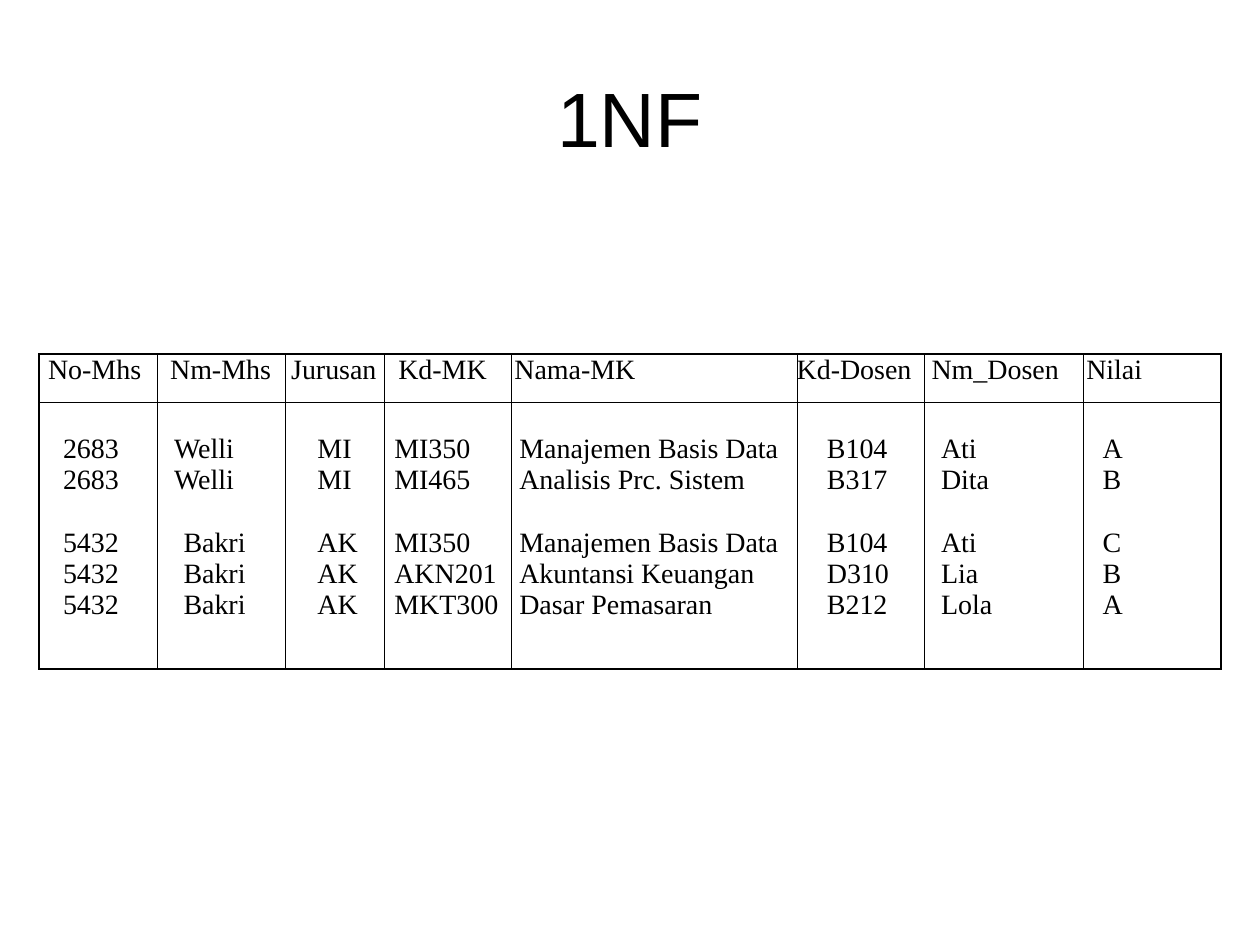
from dataclasses import dataclass

from lxml.etree import SubElement
from pptx import Presentation
from pptx.dml.color import RGBColor
from pptx.enum.shapes import MSO_CONNECTOR
from pptx.enum.text import MSO_ANCHOR, PP_ALIGN
from pptx.oxml.ns import qn
from pptx.util import Cm, Pt

BLACK = "000000"
TITLE_FONT = {"name": "Arial", "size": Pt(44)}
TABLE_FONT = {"name": "Times New Roman", "size": Pt(16)}

# Table measures in centimetres; tab stops count from the cell's text edge
LEFT, TOP, WIDTH = 0.79, 7.14, 23.82
ROW_HEIGHTS = [0.97, 5.38]
DIVIDERS = [3.18, 5.76, 7.75, 10.31, 16.08, 18.64, 21.84]
HEADER_STOPS = [2.46, 4.9, 7.06, 9.4, 15.09, 17.81, 20.93]
OTHER_STOPS = [5.43, 6.98, 9.5, 15.7, 18, 21.26]


@dataclass
class Line:
    values: list[str]
    stops: list[float]
    space_before: float = 0


@dataclass
class Student:
    number: str
    name: str
    major: str
    name_stop: float
    courses: list[list[str]]


HEADER = ["No-Mhs", "Nm-Mhs", "Jurusan", "Kd-MK", "Nama-MK",
          "Kd-Dosen", "Nm_Dosen", "Nilai"]
STUDENTS = [
    Student("2683", "Welli", "MI", 2.54, [
        ["MI350", "Manajemen Basis Data", "B104", "Ati", "A"],
        ["MI465", "Analisis Prc. Sistem", "B317", "Dita", "B"],
    ]),
    Student("5432", "Bakri", "AK", 2.73, [
        ["MI350", "Manajemen Basis Data", "B104", "Ati", "C"],
        ["AKN201", "Akuntansi Keuangan", "D310", "Lia", "B"],
        ["MKT300", "Dasar Pemasaran", "B212", "Lola", "A"],
    ]),
]


def color(value: str) -> RGBColor:
    return RGBColor.from_string(value)


def add_span(para, text: str, font_values: dict) -> None:
    span = para.add_run()
    span.text = text
    for key, value in font_values.items():
        setattr(span.font, key, value)
    span.font.color.rgb = color(BLACK)


def add_title(page, text: str) -> None:
    box = page.shapes.add_textbox(Cm(1.27), Cm(0.76), Cm(22.86), Cm(3.18))
    box.text_frame.word_wrap = True
    box.text_frame.vertical_anchor = MSO_ANCHOR.MIDDLE
    para = box.text_frame.paragraphs[0]
    para.alignment = PP_ALIGN.CENTER
    add_span(para, text, TITLE_FONT)


def set_tab_stops(para, stops: list[float]) -> None:
    tab_list = SubElement(para._p.get_or_add_pPr(), qn("a:tabLst"))
    for stop in stops:
        SubElement(tab_list, qn("a:tab"), pos=str(Cm(stop)), algn="l")


def style_cell(cell, margin_top: float) -> None:
    margins = {"margin_left": 0.18, "margin_right": 0.18,
               "margin_top": margin_top, "margin_bottom": 0}
    for key, value in margins.items():
        setattr(cell, key, Cm(value))
    for side in ("lnL", "lnR", "lnT", "lnB"):
        border = SubElement(cell._tc.get_or_add_tcPr(), qn(f"a:{side}"), w=str(Pt(1)))
        fill = SubElement(border, qn("a:solidFill"))
        SubElement(fill, qn("a:srgbClr"), val=BLACK)
    cell.fill.background()


def fill_cell(cell, lines: list[Line], margin_top: float = 0) -> None:
    style_cell(cell, margin_top)
    frame = cell.text_frame
    for index, line in enumerate(lines):
        para = frame.add_paragraph() if index else frame.paragraphs[0]
        para.space_before = Pt(line.space_before)
        set_tab_stops(para, line.stops)
        add_span(para, "\t".join(line.values), TABLE_FONT)


def student_lines(students: list[Student]) -> list[Line]:
    lines = []
    for position, student in enumerate(students):
        for index, course in enumerate(student.courses):
            # The empty first value moves the number to the first stop
            values = ["", student.number, student.name, student.major, *course]
            gap = 18 if position and not index else 0
            lines.append(Line(values, [0.3, student.name_stop, *OTHER_STOPS], gap))
    return lines


def add_grades(page) -> None:
    frame = page.shapes.add_table(2, 1, Cm(LEFT), Cm(TOP), Cm(WIDTH), Cm(sum(ROW_HEIGHTS)))
    table = frame.table
    table.first_row = table.horz_banding = False
    for row, height in zip(table.rows, ROW_HEIGHTS):
        row.height = Cm(height)
    fill_cell(table.cell(0, 0), [Line(HEADER, HEADER_STOPS)])
    fill_cell(table.cell(1, 0), student_lines(STUDENTS), margin_top=0.63)


def add_divider(page, x: float) -> None:
    divider = page.shapes.add_connector(
        MSO_CONNECTOR.STRAIGHT, Cm(x), Cm(TOP), Cm(x), Cm(TOP + sum(ROW_HEIGHTS)))
    divider.line.color.rgb = color(BLACK)
    divider.line.width = Pt(0.75)
    SubElement(divider._element.spPr, qn("a:effectLst"))


def main() -> None:
    deck = Presentation()
    deck.slide_width, deck.slide_height = Cm(25.4), Cm(19.05)
    page = deck.slides.add_slide(deck.slide_layouts[6])

    # Title, table, then the column dividers on top
    add_title(page, "1NF")
    add_grades(page)
    for x in DIVIDERS:
        add_divider(page, x)

    deck.save("out.pptx")


if __name__ == "__main__":
    main()
